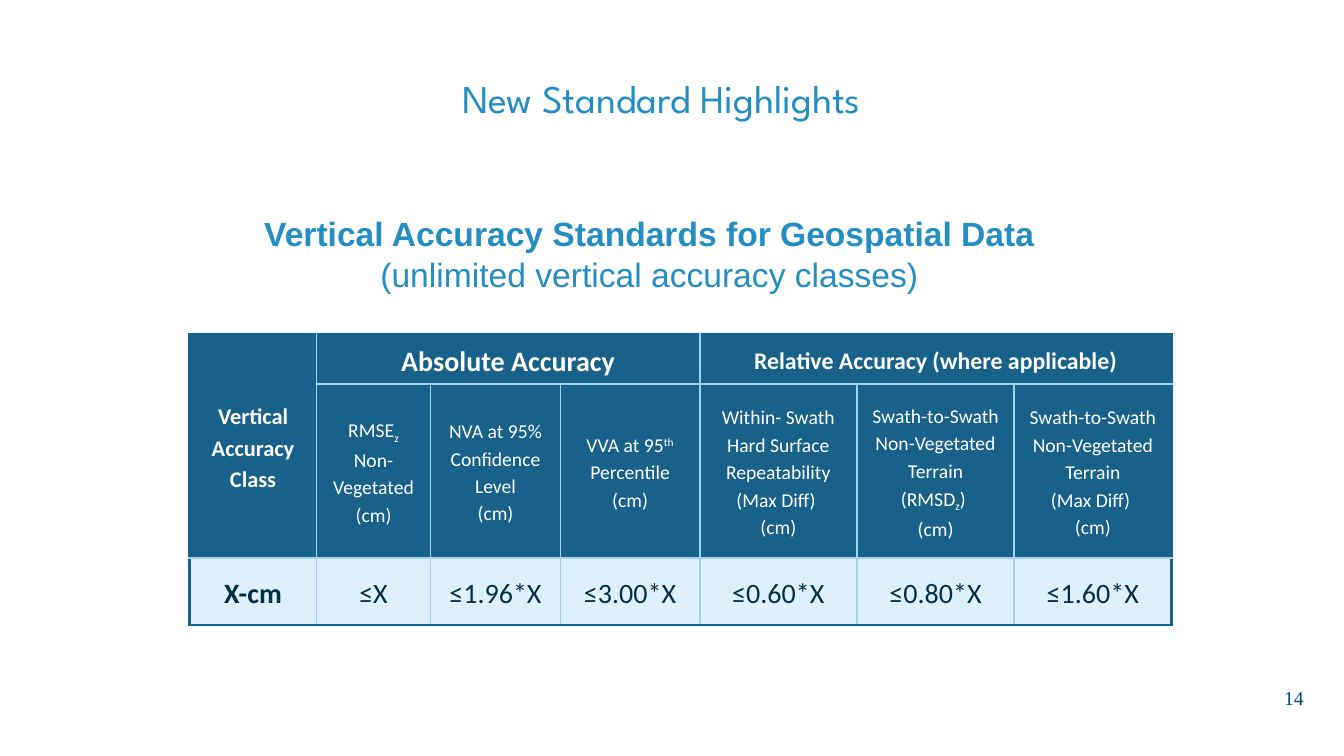
from dataclasses import dataclass
from lxml import etree
from pptx import Presentation
from pptx.dml.color import RGBColor
from pptx.enum.text import MSO_ANCHOR, MSO_AUTO_SIZE, PP_ALIGN
from pptx.oxml.ns import qn
from pptx.util import Inches, Pt

CENTER, RIGHT = PP_ALIGN.CENTER, PP_ALIGN.RIGHT
TOP, MIDDLE = MSO_ANCHOR.TOP, MSO_ANCHOR.MIDDLE
NO_FIT = MSO_AUTO_SIZE.NONE


@dataclass(frozen=True)
class Theme:
    blue: str = "248DC1"
    dark: str = "17618B"
    light: str = "9FD2EF"
    pale: str = "DFF0FA"
    navy: str = "00304C"
    number: str = "004872"
    white: str = "FFFFFF"
    title_font: str = "League Spartan"
    heading_font: str = "Arial"
    table_font: str = "Calibri"
    number_font: str = "Times New Roman"
    title: int = 28
    heading: int = 24
    value: int = 20
    relative: int = 17
    row_head: int = 16
    small: int = 14
    outer_line: float = 2.25
    inner_line: float = 1.5


T = Theme()
SUB, SUP = -25, 30

TITLE = "New Standard Highlights"
HEADING = ["Vertical Accuracy Standards for Geospatial Data",
           "(unlimited vertical accuracy classes)"]
PAGE = "14"

GROUPS = [
    (0, 2, 1, "Vertical Accuracy Class", T.row_head),
    (1, 1, 3, "Absolute Accuracy", T.value),
    (4, 1, 3, "Relative Accuracy (where applicable)", T.relative),
]
MEASURES = [
    [[("RMSE", 0), ("z", SUB)], "Non-Vegetated", "(cm)"],
    ["NVA at 95% Confidence Level", "(cm)"],
    [[("VVA at 95", 0), ("th", SUP), (" Percentile", 0)], "(cm)"],
    ["Within- Swath", "Hard Surface Repeatability", "(Max Diff) ", "(cm)"],
    ["Swath-to-Swath", "Non-Vegetated Terrain",
     [("(RMSD", 0), ("z", SUB), (") ", 0)], "(cm)"],
    ["Swath-to-Swath", "Non-Vegetated Terrain", "(Max Diff) ", "(cm)"],
]
VALUES = ["X-cm", "≤X", "≤1.96*X", "≤3.00*X", "≤0.60*X", "≤0.80*X", "≤1.60*X"]
COLS = [1.26, 1.13, 1.29, 1.38, 1.56, 1.56, 1.56]
ROWS = [0.49, 1.73, 0.66]


def write(tf, lines, font, size, color, bold=(False,), align=CENTER, spacing=None):
    for i, line in enumerate(lines):
        p = tf.paragraphs[0] if i == 0 else tf.add_paragraph()
        p.alignment = align
        if spacing:
            p.line_spacing = spacing
        for text, base in [(line, 0)] if isinstance(line, str) else line:
            r = p.add_run()
            r.text = text
            r.font.name, r.font.size = font, Pt(size)
            r.font.bold = bold[min(i, len(bold) - 1)]
            r.font.color.rgb = RGBColor.from_string(color)
            if base:
                r.font._element.set("baseline", str(base * 1000))


def set_frame(tf, anchor, wrap=True):
    tf.auto_size = NO_FIT
    tf.word_wrap = wrap
    tf.vertical_anchor = anchor


def add_text(slide, box, wrap=True):
    tf = slide.shapes.add_textbox(*map(Inches, box)).text_frame
    set_frame(tf, MIDDLE, wrap)
    return tf


def set_borders(cell, outer):
    tc_pr = cell._tc.get_or_add_tcPr()
    for side in "LRTB":
        color, width = (T.dark, T.outer_line) if side in outer else (T.light, T.inner_line)
        ln = etree.SubElement(tc_pr, qn("a:ln" + side), w=str(Pt(width)))
        fill = etree.SubElement(ln, qn("a:solidFill"))
        etree.SubElement(fill, qn("a:srgbClr"), val=color)


def format_cell(table, row, col):
    cell = table.cell(row, col)
    last_row, last_col = len(ROWS) - 1, len(COLS) - 1
    right = col + (cell.span_width if cell.is_merge_origin else 1) - 1
    edges = {"L": col == 0, "R": right == last_col, "T": row == 0, "B": row == last_row}
    set_borders(cell, [side for side, on in edges.items() if on])
    cell.fill.solid()
    cell.fill.fore_color.rgb = RGBColor.from_string(T.pale if row == last_row else T.dark)
    cell.vertical_anchor = MIDDLE
    cell.margin_left = cell.margin_right = Inches(0.07)
    cell.margin_top = cell.margin_bottom = 0


def add_accuracy_table(slide):
    frame = slide.shapes.add_table(len(ROWS), len(COLS), Inches(1.88), Inches(3.32),
                                   Inches(sum(COLS)), Inches(sum(ROWS)))
    table = frame.table
    table.first_row = table.horz_banding = False
    for column, width in zip(table.columns, COLS):
        column.width = Inches(width)
    for row, height in zip(table.rows, ROWS):
        row.height = Inches(height)
    for col, down, across, _, _ in GROUPS:
        table.cell(0, col).merge(table.cell(down - 1, col + across - 1))
    for row in range(len(ROWS)):
        for col in range(len(COLS)):
            format_cell(table, row, col)

    entries = [(0, col, [text], size, T.white, True) for col, _, _, text, size in GROUPS]
    entries += [(1, col, lines, T.small, T.white, False)
                for col, lines in enumerate(MEASURES, 1)]
    entries += [(2, col, [text], T.value, T.navy, col == 0)
                for col, text in enumerate(VALUES)]
    for row, col, lines, size, color, bold in entries:
        write(table.cell(row, col).text_frame, lines, T.table_font, size, color,
              (bold,), spacing=1.15)


def main():
    prs = Presentation()
    prs.slide_width, prs.slide_height = Inches(13.33), Inches(7.5)
    slide = prs.slides.add_slide(prs.slide_layouts[5])

    title = slide.shapes.title
    title.left, title.top, title.width, title.height = map(Inches, (2.06, 0.69, 9, 1.25))
    set_frame(title.text_frame, TOP)
    write(title.text_frame, [TITLE], T.title_font, T.title, T.blue)

    add_accuracy_table(slide)
    write(add_text(slide, (2.3, 2.06, 8.28, 0.91)), HEADING,
          T.heading_font, T.heading, T.blue, (True, False))
    write(add_text(slide, (12.68, 6.67, 0.35, 0.5), wrap=False), [PAGE],
          T.number_font, T.small, T.number, align=RIGHT)
    prs.save("out.pptx")


if __name__ == "__main__":
    main()
